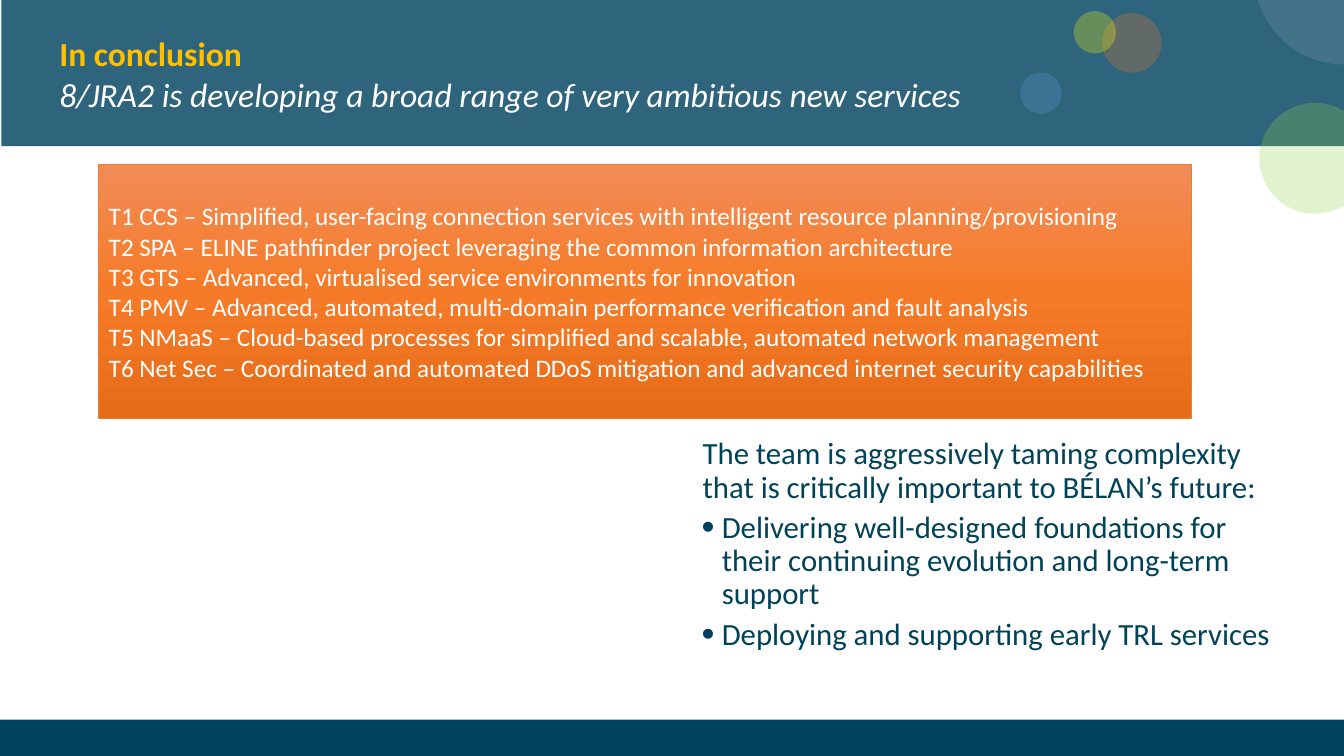
from copy import deepcopy

from pptx import Presentation
from pptx.dml.color import RGBColor
from pptx.enum.shapes import MSO_SHAPE
from pptx.enum.text import MSO_ANCHOR, PP_ALIGN
from pptx.oxml.ns import qn
from pptx.oxml.xmlchemy import OxmlElement
from pptx.util import Inches, Pt

RECT, ROUNDED, OVAL = MSO_SHAPE.RECTANGLE, MSO_SHAPE.ROUNDED_RECTANGLE, MSO_SHAPE.OVAL
BOTTOM, MIDDLE, TOP = MSO_ANCHOR.BOTTOM, MSO_ANCHOR.MIDDLE, MSO_ANCHOR.TOP
LEFT = PP_ALIGN.LEFT

WIDTH, HEIGHT = Inches(13.33), Inches(7.5)
FONT = "Calibri"
COLORS = {
    "navy": "004360", "ink": "004359", "bullet": "003F5E", "white": "FFFFFF",
    "gold": "FFC000", "green": "92D050", "orange": "ED7D31", "blue": "5D9CD5",
    "yellow": "FFFF00", "top": "F18C57", "middle": "F67B28", "bottom": "E56C19",
}

TASKS = [
    "T1 CCS – Simplified, user-facing connection services with intelligent resource planning/provisioning",
    "T2 SPA – ELINE pathfinder project leveraging the common information architecture",
    "T3 GTS – Advanced, virtualised service environments for innovation",
    "T4 PMV – Advanced, automated, multi-domain performance verification and fault analysis",
    "T5 NMaaS – Cloud-based processes for simplified and scalable, automated network management",
    "T6 Net Sec – Coordinated and automated DDoS mitigation and advanced internet security capabilities",
]
OUTLOOK = "The team is aggressively taming complexity that is critically important to BÉLAN’s future:"
GOALS = [
    "Delivering well-designed foundations for their continuing evolution and long-term support",
    "Deploying and supporting early TRL services",
]
# left (% of width), top and diameter (% of height), colour, opacity
CIRCLES = [
    (93.7, 13.6, 14.67, "green", 27),
    (82, 1.73, 7.87, "orange", 27),
    (75.92, 9.6, 5.47, "blue", 27),
    (79.89, 1.47, 5.6, "yellow", 27),
    (93.32, -15.33, 23.87, "white", 10),
]


def rgb(name):
    return RGBColor.from_string(COLORS[name])


def area(x, y, w, h):
    """Turn percentages of the slide into a position and size."""
    return [int(share * side / 100)
            for share, side in zip((x, y, w, h), (WIDTH, HEIGHT, WIDTH, HEIGHT))]


def child(parent, tag, **attrs):
    el = OxmlElement(tag)
    for key, value in attrs.items():
        el.set(key, str(value))
    parent.append(el)
    return el


def add_panel(s, kind, box, color, opacity=100):
    sp = s.shapes.add_shape(kind, *box)
    sp.shadow.inherit = False
    sp.line.fill.background()
    sp.fill.solid()
    sp.fill.fore_color.rgb = rgb(color)
    if opacity < 100:
        fill_color = sp.fill._xPr.find(qn("a:solidFill"))[0]
        child(fill_color, "a:alpha", val=opacity * 1000)
    return sp


def add_circle(s, x, y, diameter, color, opacity):
    left, top, _, side = area(x, y, 0, diameter)
    add_panel(s, OVAL, (left, top, side, side), color, opacity)


def fill_gradient(sp, names):
    """Fill from top to bottom with three evenly spaced colours."""
    sp.fill.gradient()
    sp.fill.gradient_angle = 270
    first = sp._element.spPr.find(".//" + qn("a:gs"))
    middle = deepcopy(first)
    middle.set("pos", "50000")
    first.addnext(middle)
    for stop, name in zip(sp.fill.gradient_stops, names):
        stop.color.rgb = rgb(name)


def write(tf, lines, size, color, anchor):
    tf.word_wrap = True
    tf.vertical_anchor = anchor
    for i, line in enumerate(lines):
        p = tf.add_paragraph() if i else tf.paragraphs[0]
        p.text = line
        p.alignment = LEFT
        p.font.name, p.font.size = FONT, Pt(size)
        p.font.color.rgb = rgb(color)
    return tf.paragraphs


def add_text(s, box, *text):
    return write(s.shapes.add_textbox(*box).text_frame, *text)


def indent(p, margin, first=0.0):
    pPr = p._p.get_or_add_pPr()
    pPr.set("marL", str(Inches(margin)))
    pPr.set("indent", str(Inches(first)))
    return pPr


def add_bullet(p):
    pPr = indent(p, 0.59, -0.2)
    child(child(pPr, "a:buClr"), "a:srgbClr", val=COLORS["bullet"])
    child(pPr, "a:buSzPct", val=120000)
    child(pPr, "a:buFont", typeface="Arial")
    child(pPr, "a:buChar", char="•")
    child(child(pPr, "a:tabLst"), "a:tab", pos=Inches(0.69), algn="l")


def add_title(s):
    heading, subtitle = add_text(
        s, area(3.68, 3.07, 80.42, 12.67),
        ["In conclusion", "8/JRA2 is developing a broad range of very ambitious new services"],
        24, "white", BOTTOM)
    heading.font.bold = True
    heading.font.color.rgb = rgb("gold")
    subtitle.font.italic = True


def add_outlook(s):
    panel = add_panel(s, ROUNDED, area(50.49, 56.13, 45.31, 34.67), "white", 65)
    panel.adjustments[0] = 0.07
    tf = s.shapes.add_textbox(*area(48.54, 57.33, 47.26, 31.6)).text_frame
    for _ in GOALS:
        tf.add_paragraph()
    intro, *goals = tf.paragraphs
    indent(intro, 0.4)
    for p in goals:
        add_bullet(p)
        p.space_before = Pt(5)
    tf.word_wrap = True
    tf.vertical_anchor = TOP
    for p, line in zip(tf.paragraphs, [OUTLOOK, *GOALS]):
        p.text = line
        p.line_spacing = 0.9
        p.font.name, p.font.size = FONT, Pt(22)
        p.font.color.rgb = rgb("ink")


def add_tasks(s):
    sp = add_panel(s, RECT, area(7.35, 21.73, 81.32, 33.6), "middle")
    fill_gradient(sp, ("top", "middle", "bottom"))
    sp.line.color.rgb = rgb("orange")
    sp.line.width = Pt(0.5)
    write(sp.text_frame, TASKS, 18, "white", MIDDLE)


def main():
    prs = Presentation()
    prs.slide_width, prs.slide_height = WIDTH, HEIGHT
    s = prs.slides.add_slide(prs.slide_layouts[6])
    add_panel(s, RECT, area(-0.3, 95.2, 100.3, 4.8), "navy")
    add_panel(s, RECT, area(0.1, 0, 100.1, 19.33), "navy", 82)
    add_title(s)
    add_outlook(s)
    for circle in CIRCLES:
        add_circle(s, *circle)
    add_tasks(s)
    prs.save("out.pptx")


if __name__ == "__main__":
    main()
